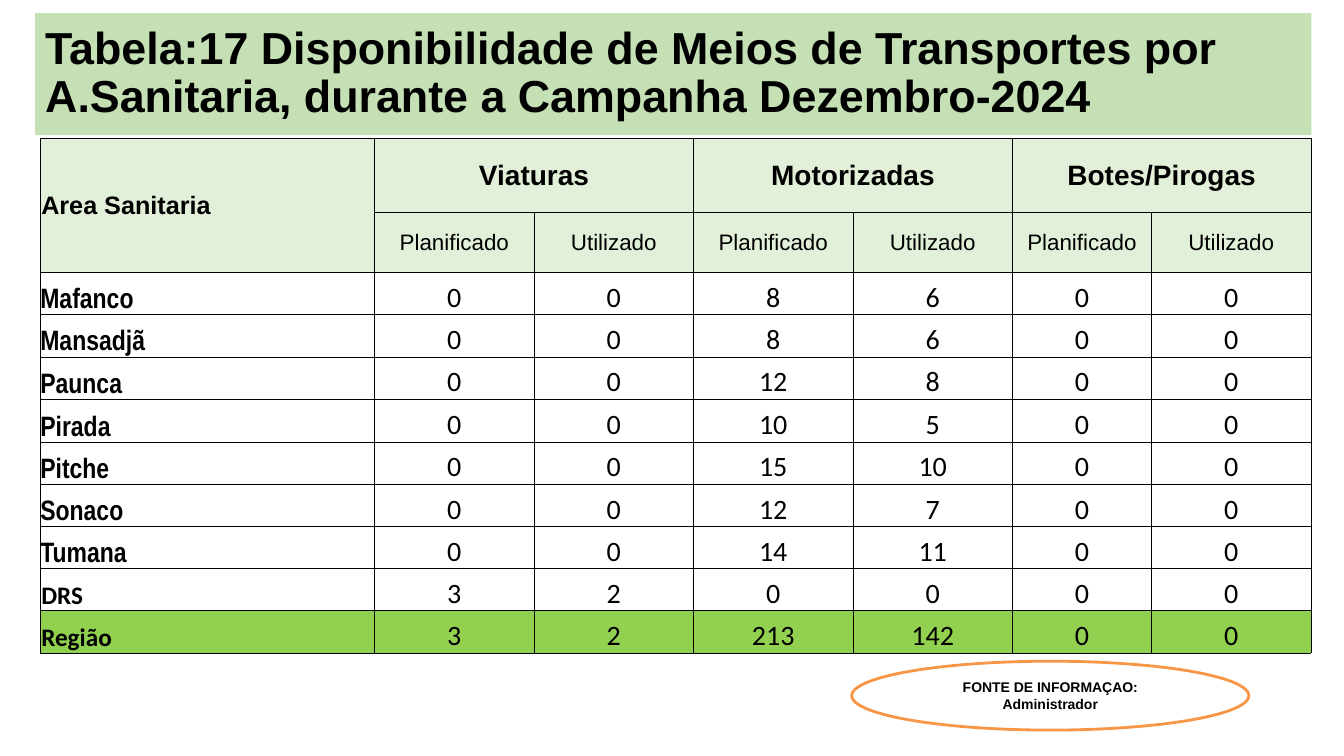
from dataclasses import dataclass

from lxml.etree import SubElement
from pptx import Presentation
from pptx.dml.color import RGBColor
from pptx.enum.shapes import MSO_SHAPE
from pptx.enum.text import MSO_ANCHOR, PP_ALIGN
from pptx.oxml.ns import qn
from pptx.slide import Slide
from pptx.table import Table, _Cell
from pptx.text.text import TextFrame
from pptx.util import Pt


@dataclass(frozen=True)
class Theme:
    black: str = "000000"
    white: str = "FFFFFF"
    title_green: str = "C5E0B4"
    header_green: str = "E2F0D9"
    total_green: str = "92D050"
    orange: str = "F79646"
    title_size: float = 32
    large_size: float = 20
    label_size: float = 18
    subheader_size: float = 16
    source_size: float = 10
    border_width: float = 0.5


@dataclass(frozen=True)
class TextStyle:
    size: float
    font: str = "Arial"
    bold: bool = True
    align: PP_ALIGN = PP_ALIGN.CENTER
    anchor: MSO_ANCHOR = MSO_ANCHOR.MIDDLE
    line_spacing: float = 1.0


@dataclass(frozen=True)
class Panel:
    preset: MSO_SHAPE
    box: tuple[float, float, float, float]
    text: str
    style: TextStyle
    fill: str
    line: str | None = None


@dataclass(frozen=True)
class AreaRow:
    name: str
    counts: tuple[int, ...]
    style: TextStyle
    fill: str
    label_inset: float


THEME = Theme()
LEFT, BOTTOM = PP_ALIGN.LEFT, MSO_ANCHOR.BOTTOM
TITLE = TextStyle(THEME.title_size, align=LEFT, line_spacing=0.9)
CORNER = TextStyle(THEME.label_size, align=LEFT)
GROUP = TextStyle(THEME.large_size)
SUBHEADER = TextStyle(THEME.subheader_size, bold=False)
AREA = TextStyle(THEME.large_size, "Arial Narrow", align=LEFT, anchor=BOTTOM)
SUMMARY = TextStyle(THEME.label_size, "Calibri", align=LEFT, anchor=BOTTOM)
COUNT = TextStyle(THEME.large_size, "Calibri", bold=False, anchor=BOTTOM)
SOURCE = TextStyle(THEME.source_size)

CELL_INSET = 0.7
TABLE_LEFT, TABLE_TOP = 28.8, 98.8
COLUMN_WIDTHS = [238.8] + [113.9] * 4 + [99.3, 113.9]
ROW_HEIGHTS = [52.7, 43.3] + [30.1] * 3 + [31] + [30.1] * 5

PANELS = [
    Panel(MSO_SHAPE.RECTANGLE, (25.2, 9.4, 911.5, 87.1),
          "Tabela:17 Disponibilidade de Meios de Transportes por "
          "A.Sanitaria, durante a Campanha Dezembro-2024",
          TITLE, THEME.title_green),
    Panel(MSO_SHAPE.OVAL, (608.4, 472.3, 283.7, 49.2),
          "FONTE DE INFORMAÇAO: Administrador", SOURCE, THEME.white, THEME.orange),
]
GROUPS = ["Viaturas", "Motorizadas", "Botes/Pirogas"]
SUBHEADERS = ["Planificado", "Utilizado"]
AREA_COUNTS = {
    "Mafanco": (0, 0, 8, 6, 0, 0),
    "Mansadjã": (0, 0, 8, 6, 0, 0),
    "Paunca": (0, 0, 12, 8, 0, 0),
    "Pirada": (0, 0, 10, 5, 0, 0),
    "Pitche": (0, 0, 15, 10, 0, 0),
    "Sonaco": (0, 0, 12, 7, 0, 0),
    "Tumana": (0, 0, 14, 11, 0, 0),
}
ROWS = [AreaRow(name, counts, AREA, THEME.white, 0)
        for name, counts in AREA_COUNTS.items()]
ROWS += [
    AreaRow("DRS", (3, 2, 0, 0, 0, 0), SUMMARY, THEME.white, CELL_INSET),
    AreaRow("Região", (3, 2, 213, 142, 0, 0), SUMMARY, THEME.total_green, CELL_INSET),
]


def write_text(frame: TextFrame, text: str, style: TextStyle) -> None:
    paragraph = frame.paragraphs[0]
    paragraph.alignment = style.align
    paragraph.line_spacing = style.line_spacing
    run = paragraph.add_run()
    run.text = text
    font_format = {"name": style.font, "size": Pt(style.size), "bold": style.bold}
    for attribute, value in font_format.items():
        setattr(run.font, attribute, value)
    run.font.color.rgb = RGBColor.from_string(THEME.black)


def add_panel(slide: Slide, panel: Panel) -> None:
    shape = slide.shapes.add_shape(panel.preset, *map(Pt, panel.box))
    shape.shadow.inherit = False
    shape.fill.solid()
    shape.fill.fore_color.rgb = RGBColor.from_string(panel.fill)
    if panel.line:
        shape.line.color.rgb = RGBColor.from_string(panel.line)
        shape.line.width = Pt(2)
    else:
        shape.line.fill.background()
    shape.text_frame.word_wrap = True
    shape.text_frame.vertical_anchor = panel.style.anchor
    write_text(shape.text_frame, panel.text, panel.style)


def format_cell(cell: _Cell, fill: str, inset: float = CELL_INSET) -> None:
    """Fill the cell, set its margins and draw its four borders."""
    margins = {"margin_left": inset, "margin_right": inset,
               "margin_top": inset, "margin_bottom": 0}
    for attribute, value in margins.items():
        setattr(cell, attribute, Pt(value))
    cell.fill.solid()
    cell.fill.fore_color.rgb = RGBColor.from_string(fill)
    properties = cell._tc.get_or_add_tcPr()
    for position, side in enumerate(("lnL", "lnR", "lnT", "lnB")):
        border = SubElement(properties, qn(f"a:{side}"), w=str(Pt(THEME.border_width)))
        line_fill = SubElement(border, qn("a:solidFill"))
        SubElement(line_fill, qn("a:srgbClr"), val=THEME.black)
        properties.insert(position, border)


def write_cell(cell: _Cell, text: str, style: TextStyle) -> None:
    cell.vertical_anchor = style.anchor
    write_text(cell.text_frame, text, style)


def fill_header(table: Table) -> None:
    for row in range(2):
        for column in range(len(COLUMN_WIDTHS)):
            format_cell(table.cell(row, column), THEME.header_green)
    table.cell(0, 0).merge(table.cell(1, 0))
    write_cell(table.cell(0, 0), "Area Sanitaria", CORNER)
    for index, group in enumerate(GROUPS):
        first = 1 + index * len(SUBHEADERS)
        table.cell(0, first).merge(table.cell(0, first + 1))
        write_cell(table.cell(0, first), group, GROUP)
        for offset, subheader in enumerate(SUBHEADERS):
            write_cell(table.cell(1, first + offset), subheader, SUBHEADER)


def add_transport_table(slide: Slide) -> None:
    frame = slide.shapes.add_table(
        len(ROW_HEIGHTS), len(COLUMN_WIDTHS), Pt(TABLE_LEFT), Pt(TABLE_TOP),
        Pt(sum(COLUMN_WIDTHS)), Pt(sum(ROW_HEIGHTS)))
    table = frame.table
    table.first_row = table.horz_banding = False
    for column, width in zip(table.columns, COLUMN_WIDTHS):
        column.width = Pt(width)
    for row, height in zip(table.rows, ROW_HEIGHTS):
        row.height = Pt(height)
    fill_header(table)
    for row_index, area in enumerate(ROWS, start=2):
        label = table.cell(row_index, 0)
        format_cell(label, area.fill, area.label_inset)
        write_cell(label, area.name, area.style)
        for column_index, count in enumerate(area.counts, start=1):
            cell = table.cell(row_index, column_index)
            format_cell(cell, area.fill)
            write_cell(cell, str(count), COUNT)


def main() -> None:
    presentation = Presentation()
    presentation.slide_width, presentation.slide_height = Pt(960), Pt(540)
    slide = presentation.slides.add_slide(presentation.slide_layouts[6])
    title, source = PANELS
    add_panel(slide, title)
    add_transport_table(slide)
    add_panel(slide, source)
    presentation.save("out.pptx")


if __name__ == "__main__":
    main()
